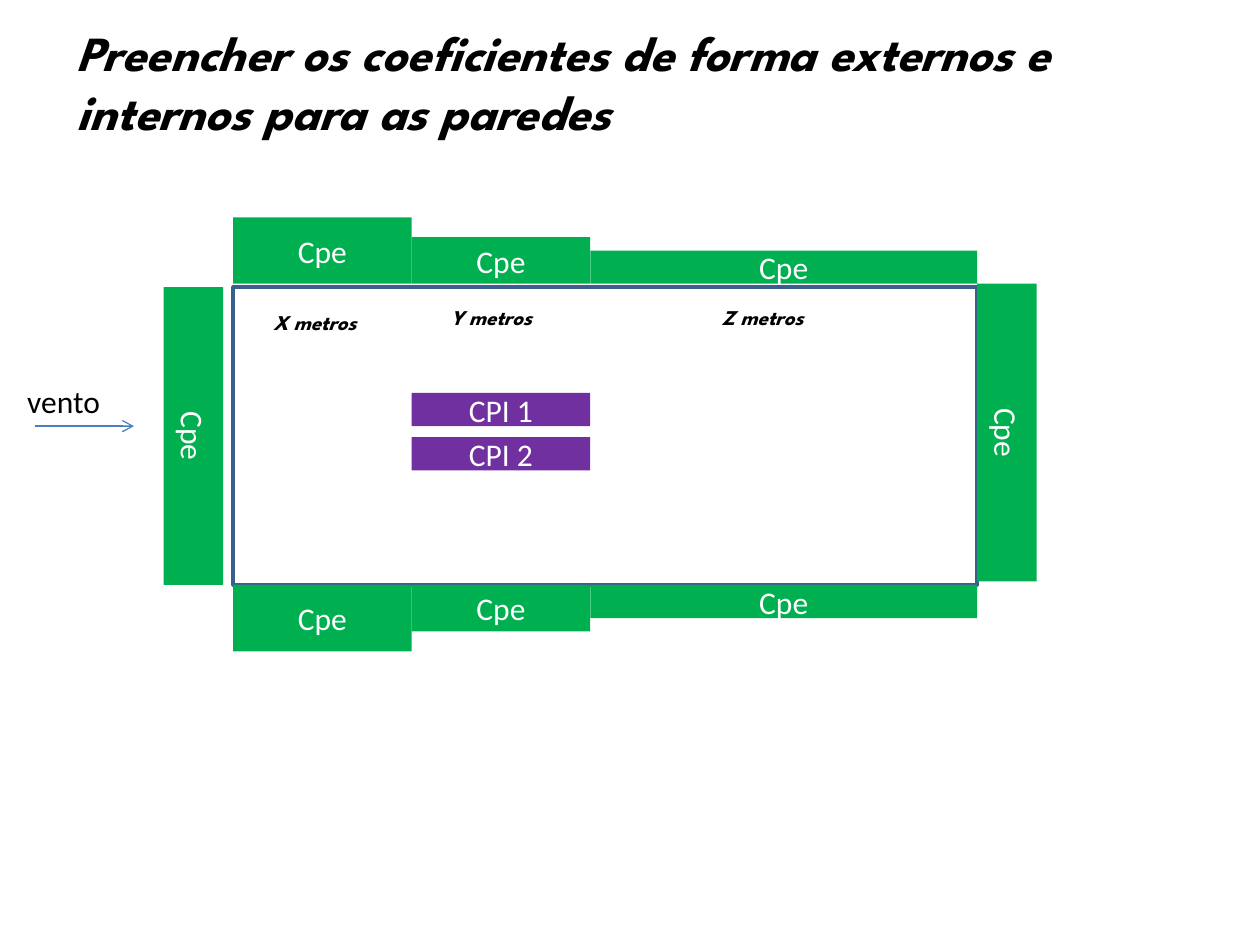
import pptx
import pptx.util
import pptx.dml.color
import pptx.enum.shapes
import pptx.enum.text
import pptx.oxml
import pptx.oxml.ns

Cm = pptx.util.Cm
Pt = pptx.util.Pt


def color(code):
    return pptx.dml.color.RGBColor.from_string(code)


class Board:
    green = "00B050"
    purple = "7030A0"
    plain = "Calibri"
    fancy = "League Spartan"

    def __init__(self, slide):
        self.slide = slide

    def fill_in(self, frame, text, size, face, shade, bold=None):
        para = frame.paragraphs[0]
        para.text = text
        font = para.font
        font.size = Pt(size)
        font.name = face
        font.bold = font.italic = bold
        font.color.rgb = color(shade)
        return para

    def label(self, left, top, width, height, text, size, face, bold=None):
        box = self.slide.shapes.add_textbox(Cm(left), Cm(top), Cm(width), Cm(height))
        box.text_frame.word_wrap = True
        self.fill_in(box.text_frame, text, size, face, "000000", bold)

    def rect(self, left, top, width, height):
        kind = pptx.enum.shapes.MSO_SHAPE.RECTANGLE
        shape = self.slide.shapes.add_shape(kind, Cm(left), Cm(top), Cm(width), Cm(height))
        shape.shadow.inherit = False
        return shape

    def frame(self, left, top, width, height):
        shape = self.rect(left, top, width, height)
        shape.fill.background()
        shape.line.color.rgb = color("3A5F8C")
        shape.line.width = Pt(2)

    def wall(self, left, top, width, height, text, fill):
        shape = self.rect(left, top, width, height)
        shape.fill.solid()
        shape.fill.fore_color.rgb = color(fill)
        shape.line.fill.background()
        body = shape.text_frame
        body.vertical_anchor = pptx.enum.text.MSO_ANCHOR.MIDDLE
        para = self.fill_in(body, text, 18, self.plain, "FFFFFF")
        para.alignment = pptx.enum.text.PP_ALIGN.CENTER
        shape.element.txBody.bodyPr.set("vert", "vert")
        return shape

    def strip(self, left, top, width, height, text, fill):
        shift = (width - height) / 2
        shape = self.wall(left + shift, top - shift, height, width, text, fill)
        shape.rotation = 270

    def arrow(self, start, end, level):
        kind = pptx.enum.shapes.MSO_CONNECTOR.STRAIGHT
        link = self.slide.shapes.add_connector(kind, Cm(start), Cm(level), Cm(end), Cm(level))
        link.line.color.rgb = color("4B7EBC")
        link.line.width = Pt(0.75)
        qn = pptx.oxml.ns.qn
        props = link.element.spPr
        tip = props.makeelement(qn("a:tailEnd"), {"type": "arrow"})
        props.find(qn("a:ln")).append(tip)
        props.append(props.makeelement(qn("a:effectLst"), {}))


def main():
    deck = pptx.Presentation()
    deck.slide_width = Cm(25.4)
    deck.slide_height = Cm(19.05)
    board = Board(deck.slides.add_slide(deck.slide_layouts[6]))

    left, top, width, height = 4.7, 5.79, 15, 6
    upper = top - 0.07
    base = top + height

    title = "Preencher os coeficientes de forma externos e internos para as paredes"
    board.label(1.3, 0.33, 20.6, 2.64, title, 28, board.fancy, True)
    board.frame(left, top, width, height)
    board.arrow(0.7, 2.7, 8.59)
    board.label(0.3, 7.57, 2.4, 1.02, "vento", 18, board.plain)

    board.wall(3.3, top, 1.2, height, "Cpe", board.green)
    board.wall(left + width, upper, 1.2, height, "Cpe", board.green)

    edge = left
    for span, depth in ((3.6, 1.34), (3.6, 0.94), (7.8, 0.67)):
        for start in (upper - depth, base):
            board.strip(edge, start, span, depth, "Cpe", board.green)
        edge += span

    for text, x, y in (("X metros", 5.26, 6.12), ("Y metros", 8.84, 6.02), ("Z metros", 14.3, 6.02)):
        board.label(x, y, 2.5, 0.76, text, 12, board.fancy, True)

    for text, y in (("CPI 1", 7.92), ("CPI 2", 8.81)):
        board.strip(left + 3.6, y, 3.6, 0.67, text, board.purple)

    deck.save("out.pptx")


if __name__ == "__main__":
    main()
